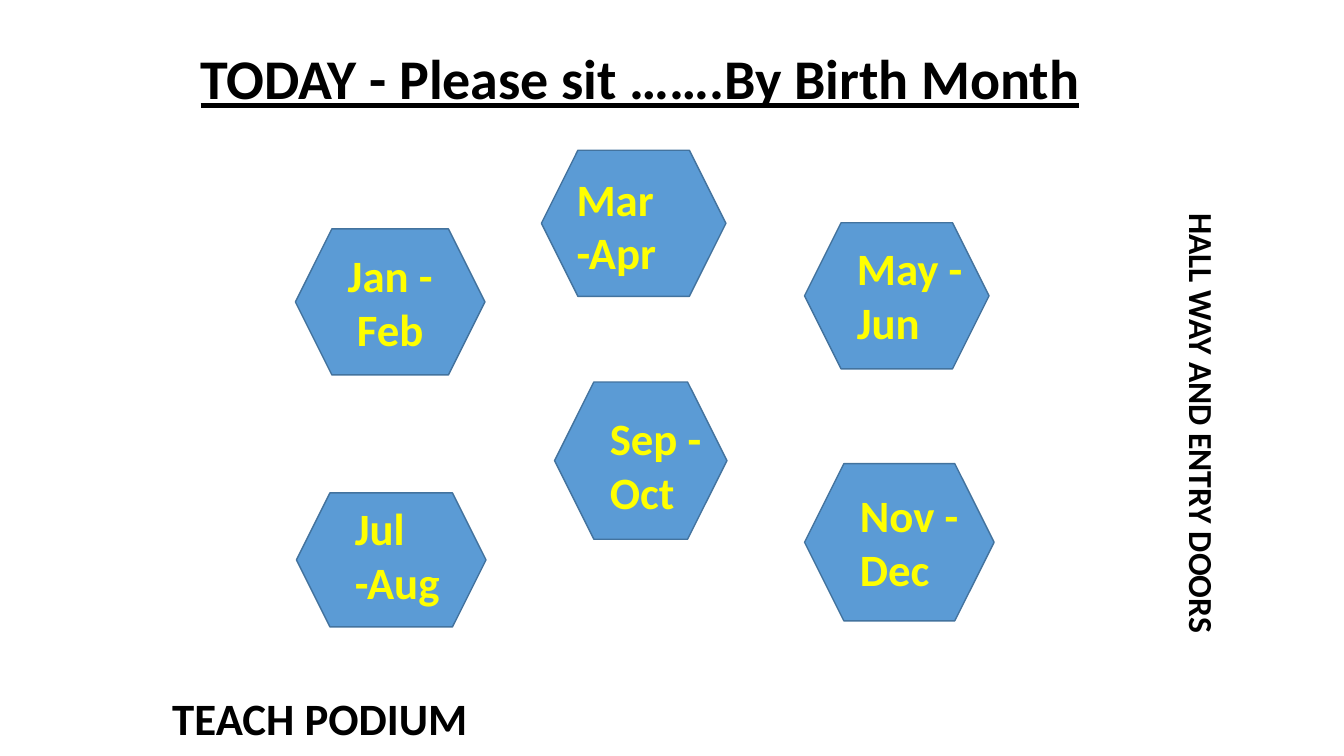
from dataclasses import dataclass

from pptx import Presentation
from pptx.dml.color import RGBColor
from pptx.enum.shapes import MSO_SHAPE
from pptx.enum.text import MSO_ANCHOR, PP_ALIGN
from pptx.util import Inches, Pt

HEXAGON = MSO_SHAPE.HEXAGON
MIDDLE, TOP = MSO_ANCHOR.MIDDLE, MSO_ANCHOR.TOP
CENTER = PP_ALIGN.CENTER
FONT = "Calibri"
COLORS = {"ink": "000000", "month": "FFFF00", "seat": "5B9BD5", "edge": "43739E"}

Box = tuple[float, float, float, float]


@dataclass
class Label:
    text: str
    box: Box
    size: int = 32
    color: str = "ink"
    turn: int = 0
    line: bool = False
    anchor: MSO_ANCHOR = TOP
    space: float = 1.0


@dataclass
class Seat:
    months: str
    box: Box
    label: Box | None = None  # None: the text sits in the hexagon


SIGNS = [
    Label("TODAY - Please sit …….By Birth Month", (1.89, 0.52, 9.55, 0.58),
          size=40, line=True, anchor=MIDDLE, space=0.9),
    Label("TEACH PODIUM", (1.61, 6.8, 4.01, 0.64)),
    Label("HALL WAY AND ENTRY DOORS", (9.7, 3.98, 4.44, 0.51), size=24, turn=90),
]

SEATS = [
    Seat("Jan - Feb", (2.93, 2.27, 1.88, 1.45)),
    Seat("Mar -Apr", (5.37, 1.49, 1.83, 1.45), (5.62, 1.65, 1.32, 1.18)),
    Seat("May - Jun", (7.98, 2.21, 1.83, 1.45), (8.4, 2.34, 1.41, 1.18)),
    Seat("Jul -Aug", (2.94, 4.89, 1.88, 1.33), (3.42, 4.92, 1.45, 1.18)),
    Seat("Sep - Oct", (5.5, 3.79, 1.71, 1.56), (5.95, 4.03, 1.16, 1.18)),
    Seat("Nov - Dec", (7.98, 4.6, 1.88, 1.56), (8.43, 4.79, 1.33, 1.18)),
]


def paint(name: str) -> RGBColor:
    return RGBColor.from_string(COLORS[name])


def write(shape, text: str, size: int, color: str, line: bool = False) -> None:
    frame = shape.text_frame
    frame.word_wrap = True
    frame.text = text
    font = frame.paragraphs[0].runs[0].font
    font.name, font.size, font.bold = FONT, Pt(size), True
    font.underline = line
    font.color.rgb = paint(color)


def add_label(slide, label: Label) -> None:
    shape = slide.shapes.add_textbox(*map(Inches, label.box))
    write(shape, label.text, label.size, label.color, label.line)
    shape.rotation = label.turn
    shape.text_frame.vertical_anchor = label.anchor
    shape.text_frame.paragraphs[0].line_spacing = label.space


def add_seat(slide, seat: Seat) -> None:
    shape = slide.shapes.add_shape(HEXAGON, *map(Inches, seat.box))
    shape.shadow.inherit = False
    shape.fill.solid()
    shape.fill.fore_color.rgb = paint("seat")
    shape.line.color.rgb = paint("edge")
    shape.line.width = Pt(1)
    if seat.label:
        add_label(slide, Label(seat.months, seat.label, color="month"))
    else:
        write(shape, seat.months, 32, "month")
        shape.text_frame.vertical_anchor = MIDDLE
        shape.text_frame.paragraphs[0].alignment = CENTER


def main() -> None:
    deck = Presentation()
    deck.slide_width, deck.slide_height = Inches(13.33), Inches(7.5)
    slide = deck.slides.add_slide(deck.slide_layouts[6])

    # Title and room signs
    for sign in SIGNS:
        add_label(slide, sign)

    # Tables by birth month
    for seat in SEATS:
        add_seat(slide, seat)

    deck.save("out.pptx")


if __name__ == "__main__":
    main()
